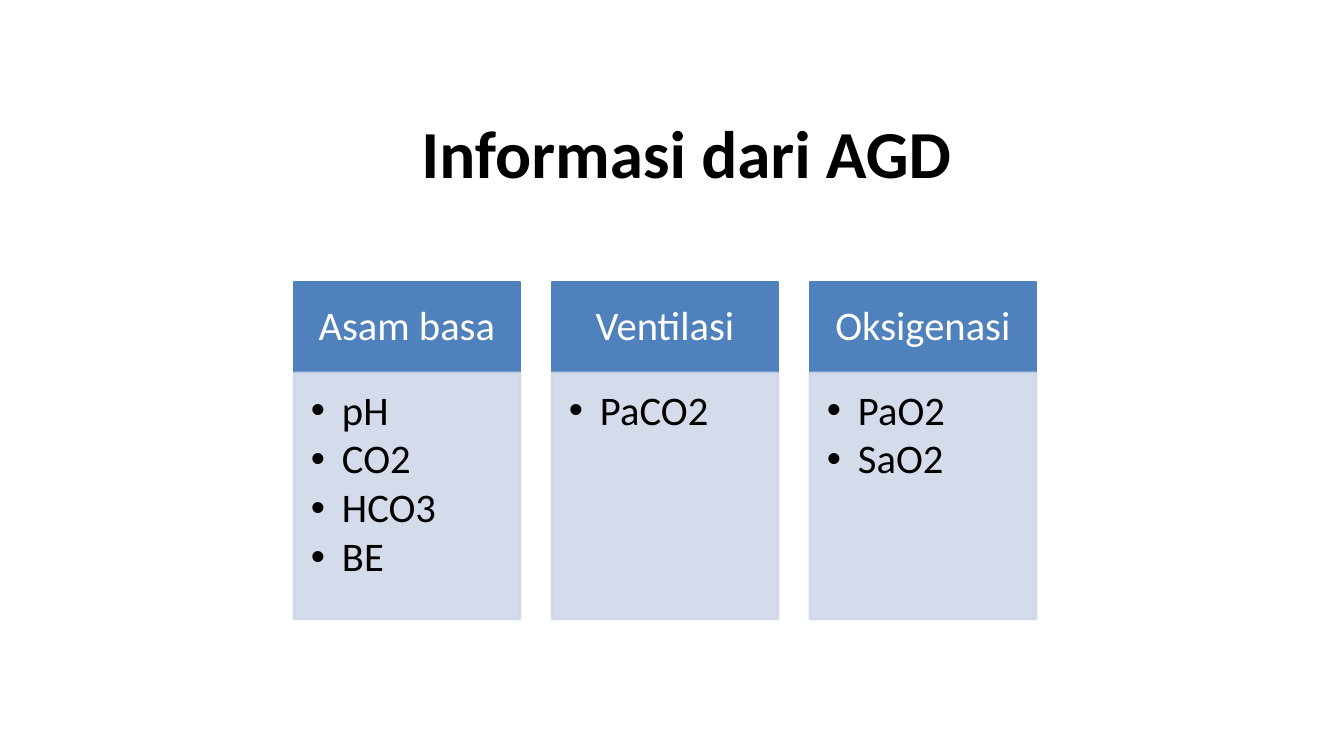
"""Build a slide listing what an arterial blood gas test tells."""
from lxml import etree
from pptx import Presentation, util as u
from pptx.dml.color import RGBColor
from pptx.enum import shapes, text
from pptx.oxml.ns import qn

TITLE = "Informasi dari AGD"
COLUMNS = [
    ("Asam basa", ["pH", "CO2", "HCO3", "BE"]),
    ("Ventilasi", ["PaCO2"]),
    ("Oksigenasi", ["PaO2", "SaO2"]),
]
BLUE, PALE, BLACK, WHITE = "4F81BD", "D0D8E8", "000000", "FFFFFF"
LEFT, TOP, WIDTH, STEP = 294, 282, 226, 258
HEAD_HEIGHT, BODY_HEIGHT = 91, 246
INDENT = 31


def px(length):
    return u.Emu(round(length * 914400 / 100.8))


def rgb(value):
    return RGBColor.from_string(value)


def add_bullet(para):
    props = para._p.get_or_add_pPr()
    props.set("marL", str(px(INDENT)))
    props.set("indent", str(-px(INDENT)))
    etree.SubElement(props, qn("a:buFont")).set("typeface", "Arial")
    etree.SubElement(props, qn("a:buChar")).set("char", "•")


def write(shape, lines, size=29, color=BLACK, bold=False, align="LEFT",
          anchor="TOP", insets=(10, 5, 10, 5), spacing=1.0, after=0, bullets=False):
    frame = shape.text_frame
    frame.word_wrap = True
    frame.vertical_anchor = text.MSO_ANCHOR[anchor]
    (frame.margin_left, frame.margin_top,
     frame.margin_right, frame.margin_bottom) = map(px, insets)
    for index, line in enumerate(lines):
        para = frame.add_paragraph() if index else frame.paragraphs[0]
        para.alignment = text.PP_ALIGN[align]
        para.line_spacing = spacing
        para.space_after = u.Pt(after)
        if bullets:
            add_bullet(para)
        span = para.add_run()
        span.text = line
        span.font.name = "Calibri"
        span.font.size = u.Pt(size)
        span.font.bold = bold
        span.font.color.rgb = rgb(color)


def add_panel(page, left, top, height, color, opacity=100):
    box = page.shapes.add_shape(shapes.MSO_SHAPE.RECTANGLE,
                                px(left), px(top), px(WIDTH), px(height))
    box.shadow.inherit = False
    box.fill.solid()
    box.line.width = u.Pt(2)
    for paint in (box.fill.fore_color, box.line.color):
        paint.rgb = rgb(color)
    if opacity < 100:
        for tint in box._element.spPr.iter(qn("a:srgbClr")):
            etree.SubElement(tint, qn("a:alpha")).set("val", str(opacity * 1000))
    return box


def main():
    deck = Presentation()
    deck.slide_width, deck.slide_height = px(1344), px(756)
    page = deck.slides.add_slide(deck.slide_layouts[6])
    title = page.shapes.add_textbox(px(252), px(106), px(869), px(146))
    write(title, [TITLE], size=48, bold=True, align="CENTER")
    for index, (heading, items) in enumerate(COLUMNS):
        left = LEFT + index * STEP
        head = add_panel(page, left, TOP, HEAD_HEIGHT, BLUE)
        write(head, [heading], color=WHITE, align="CENTER", anchor="MIDDLE",
              insets=(23, 13, 23, 13), spacing=0.9)
        body = add_panel(page, left, TOP + HEAD_HEIGHT, BODY_HEIGHT, PALE, opacity=90)
        write(body, items, insets=(17, 17, 23, 25), spacing=0.9, after=3.6, bullets=True)
    deck.save("out.pptx")


if __name__ == "__main__":
    main()
